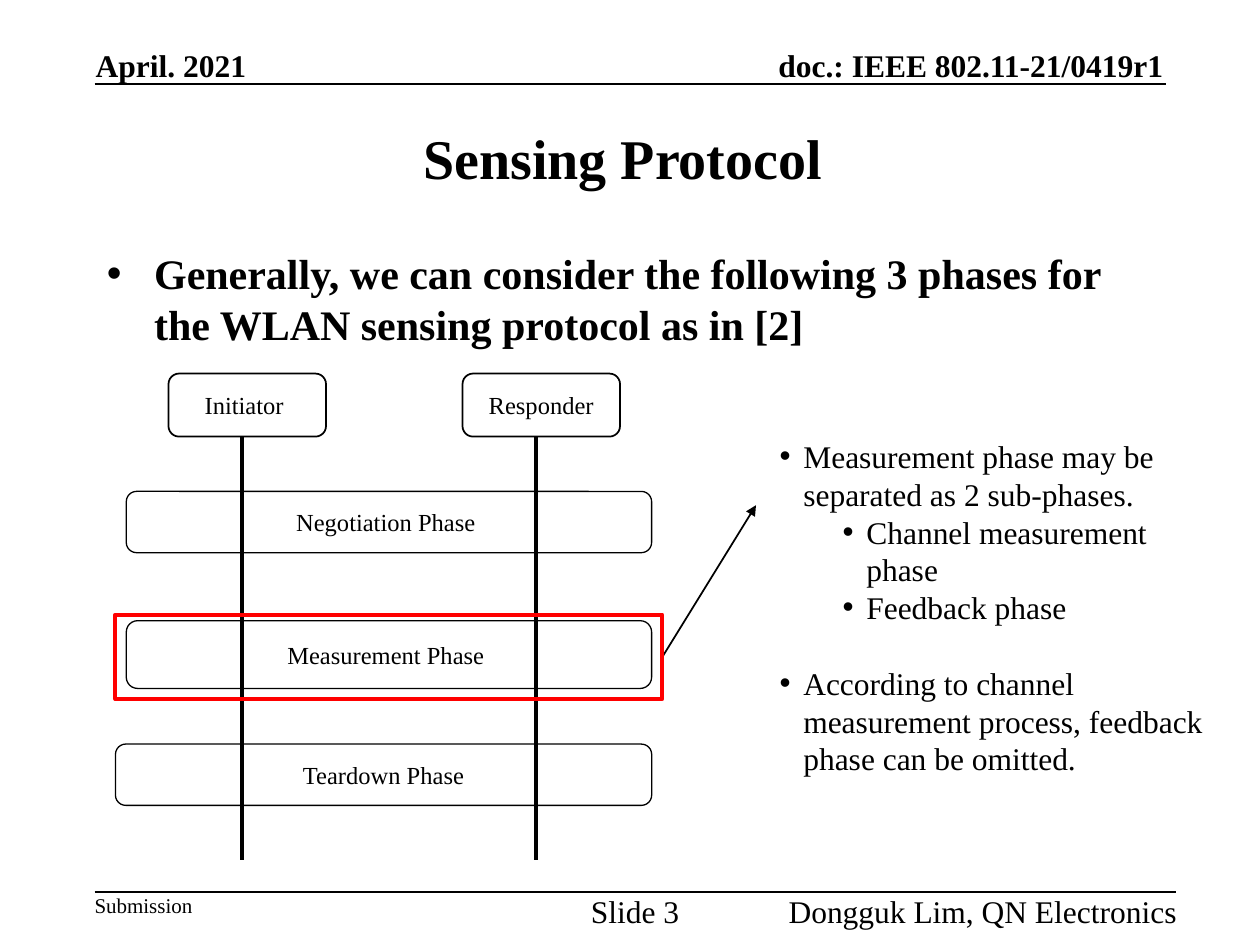
"""Build the Sensing Protocol slide with its phase diagram."""
from lxml import etree
from pptx import Presentation
from pptx.dml.color import RGBColor
from pptx.enum.shapes import MSO_CONNECTOR, MSO_SHAPE
from pptx.enum.text import MSO_ANCHOR, PP_ALIGN
from pptx.oxml.ns import qn
from pptx.util import Pt

LEFT, CENTER, RIGHT = PP_ALIGN.LEFT, PP_ALIGN.CENTER, PP_ALIGN.RIGHT
TOP, MIDDLE, BOTTOM = MSO_ANCHOR.TOP, MSO_ANCHOR.MIDDLE, MSO_ANCHOR.BOTTOM
RECTANGLE, ROUNDED = MSO_SHAPE.RECTANGLE, MSO_SHAPE.ROUNDED_RECTANGLE
STRAIGHT = MSO_CONNECTOR.STRAIGHT

FONT = "Times New Roman"
COLORS = {"ink": "000000", "highlight": "FF0000"}

MARGINALS = [
    ("doc.: IEEE 802.11-21/0419r1", (396.8, 26.3, 268, 21.6), 18, True, RIGHT, BOTTOM),
    ("April. 2021", (54.7, 26.3, 100, 21.6), 18, True, LEFT, BOTTOM),
    ("Submission", (54, 509.8, 70, 14.4), 12, False, LEFT, TOP),
    ("Slide 3", (322.9, 509.8, 80, 21.6), 18, False, CENTER, TOP),
    ("Dongguk Lim, QN Electronics", (432.5, 509.8, 240, 21.6), 18, False, RIGHT, TOP),
]
RULES = [(54, 48, 666, 48), (54, 509.8, 672, 509.8)]

TITLE = "Sensing Protocol "
TITLE_BOX = (54, 54, 612, 72)
STATEMENT = "Generally, we can consider the following 3 phases for the WLAN sensing protocol as in [2]"
STATEMENT_BOX = (54, 138, 612, 342)

STATIONS = [("Initiator ", 96.3), ("Responder", 264.3)]
STATION_TOP, STATION_WIDTH, STATION_HEIGHT = 213.5, 90, 36
LIFELINE_OFFSET, LIFELINE_BOTTOM = 42, 491.6
PHASES = [
    ("Negotiation Phase ", (72.2, 280.8, 300.2, 35)),
    ("Measurement Phase ", (72.2, 354.7, 300.2, 38.7)),
    ("Teardown Phase", (66, 425.2, 306.4, 35)),
]
HIGHLIGHT_BOX = (66, 351.2, 312.5, 48.4)
ARROW = (378.7, 375.1, 432, 288.7)

NOTES_BOX = (438.5, 246.2, 269.3, 225.4)
NOTES = [
    ("Measurement phase may be separated as 2 sub-phases.", 13.5, 0),
    ("Channel measurement phase", 49.5, 0),
    ("Feedback phase", 49.5, 0),
    ("According to channel measurement process, feedback phase can be omitted.", 13.5, 21.6),
]


def points(values):
    return [Pt(value) for value in values]


def add_run(paragraph, text, size, bold=False):
    run = paragraph.add_run()
    run.text = text
    run.font.name = FONT
    run.font.size = Pt(size)
    run.font.bold = bold
    run.font.color.rgb = RGBColor.from_string(COLORS["ink"])


def add_bullet(paragraph, indent, hanging):
    properties = paragraph._p.get_or_add_pPr()
    properties.set("marL", str(Pt(indent)))
    properties.set("indent", str(-Pt(hanging)))
    etree.SubElement(properties, qn("a:buFont")).set("typeface", "Arial")
    etree.SubElement(properties, qn("a:buChar")).set("char", "•")


def add_text_box(slide, box, anchor=TOP, inset=True):
    frame = slide.shapes.add_textbox(*points(box)).text_frame
    frame.word_wrap = True
    frame.vertical_anchor = anchor
    if not inset:
        frame.margin_left = frame.margin_right = frame.margin_top = frame.margin_bottom = 0
    return frame


def add_outline(slide, kind, box, width, color="ink", text=None):
    shape = slide.shapes.add_shape(kind, *points(box))
    shape.shadow.inherit = False
    shape.fill.background()
    shape.line.color.rgb = RGBColor.from_string(COLORS[color])
    shape.line.width = Pt(width)
    if text:
        shape.text_frame.word_wrap = True
        shape.text_frame.vertical_anchor = MIDDLE
        paragraph = shape.text_frame.paragraphs[0]
        paragraph.alignment = CENTER
        add_run(paragraph, text, 14)


def add_line(slide, ends, width, arrow=False):
    connector = slide.shapes.add_connector(STRAIGHT, *points(ends))
    connector.line.color.rgb = RGBColor.from_string(COLORS["ink"])
    connector.line.width = Pt(width)
    if arrow:
        etree.SubElement(connector.line._get_or_add_ln(), qn("a:tailEnd")).set("type", "triangle")
    etree.SubElement(connector._element.spPr, qn("a:effectLst"))


def add_page_frame(slide):
    for text, box, size, bold, alignment, anchor in MARGINALS:
        paragraph = add_text_box(slide, box, anchor, inset=False).paragraphs[0]
        paragraph.alignment = alignment
        add_run(paragraph, text, size, bold)
    for ends in RULES:
        add_line(slide, ends, 1)


def add_headings(slide):
    title = add_text_box(slide, TITLE_BOX, MIDDLE).paragraphs[0]
    title.alignment = CENTER
    add_run(title, TITLE, 32, True)
    statement = add_text_box(slide, STATEMENT_BOX).paragraphs[0]
    statement.space_before = Pt(4.8)
    add_bullet(statement, 27, 27)
    add_run(statement, STATEMENT, 24, True)


def add_diagram(slide):
    station_bottom = STATION_TOP + STATION_HEIGHT
    for text, left in STATIONS:
        box = (left, STATION_TOP, STATION_WIDTH, STATION_HEIGHT)
        add_outline(slide, ROUNDED, box, 1, text=text)
        center = left + LIFELINE_OFFSET
        add_line(slide, (center, station_bottom, center, LIFELINE_BOTTOM), 2.25)
    for text, box in PHASES:
        add_outline(slide, ROUNDED, box, 0.75, text=text)
    add_line(slide, ARROW, 1, arrow=True)
    add_outline(slide, RECTANGLE, HIGHLIGHT_BOX, 2.25, "highlight")


def add_notes_column(slide):
    frame = add_text_box(slide, NOTES_BOX)
    for index, (text, indent, gap) in enumerate(NOTES):
        paragraph = frame.add_paragraph() if index else frame.paragraphs[0]
        paragraph.space_before = Pt(gap)
        add_bullet(paragraph, indent, 13.5)
        add_run(paragraph, text, 18)


def main():
    presentation = Presentation()
    presentation.slide_width, presentation.slide_height = Pt(720), Pt(540)
    slide = presentation.slides.add_slide(presentation.slide_layouts[6])
    add_page_frame(slide)
    add_headings(slide)
    add_diagram(slide)
    add_notes_column(slide)
    presentation.save("out.pptx")


if __name__ == "__main__":
    main()
